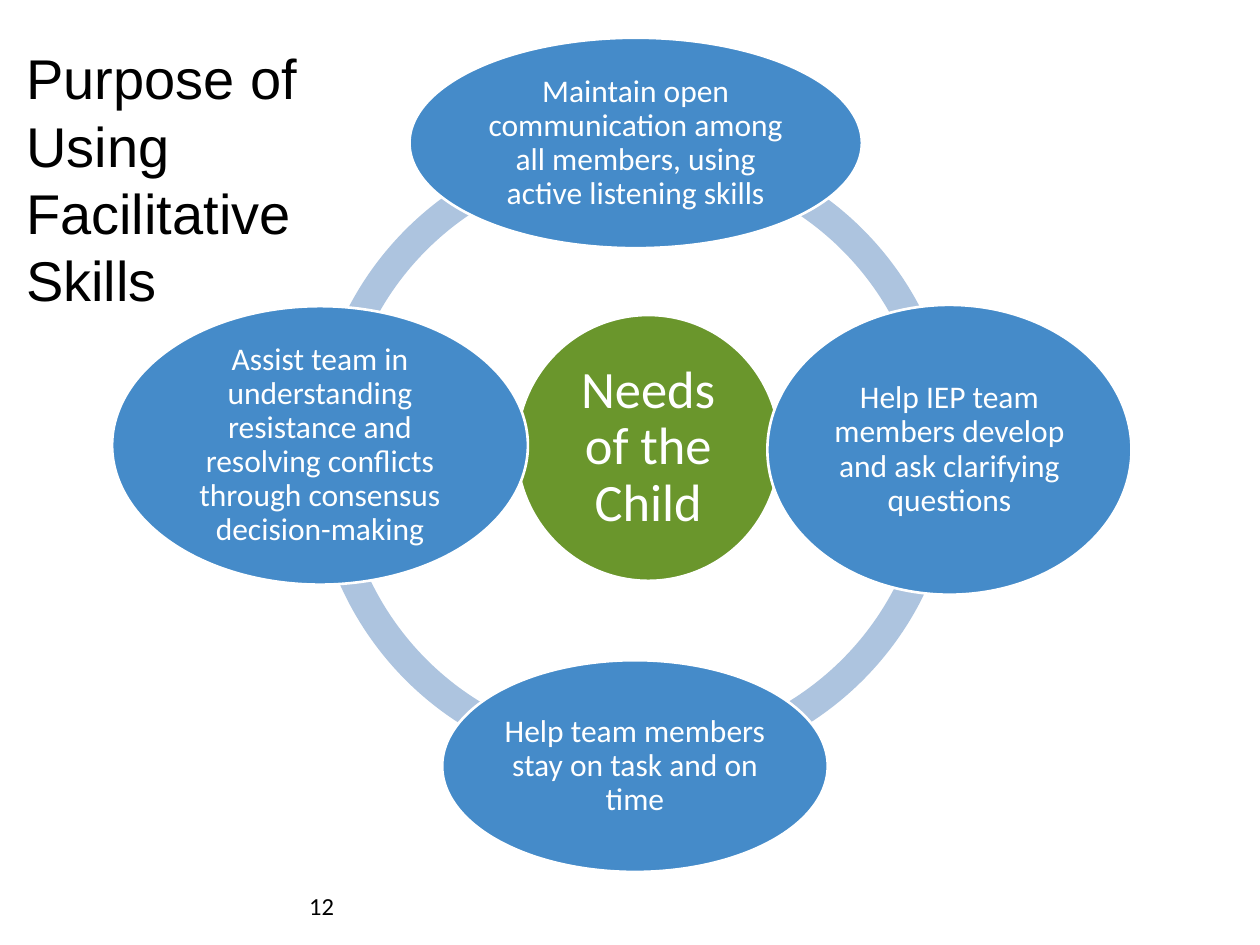
from pptx import Presentation
from pptx.dml.color import RGBColor
from pptx.enum.shapes import MSO_SHAPE
from pptx.enum.text import MSO_ANCHOR, MSO_AUTO_SIZE, PP_ALIGN
from pptx.util import Inches, Pt

BLUE, GREEN, PALE_BLUE = "458BC9", "6A962C", "ADC4DF"
WHITE, BLACK = "FFFFFF", "000000"

RING_SIZE, RING_TOP = 5.06, 1.08
RING_ARCS = [
    (2.48, 109.09, 162.31),
    (2.48, 53.69, 109.09),
    (2.53, 215.4, 54.3),
    (2.53, 161.7, 215.4),
]
PURPOSES = [
    ((3.25, 0.3, 3.59, 1.67),
     "Maintain open communication among all members, using active listening skills"),
    ((6.09, 2.42, 2.89, 2.3),
     "Help IEP team members develop and ask clarifying questions"),
    ((3.51, 5.24, 3.06, 1.68),
     "Help team members stay on task and on time"),
    ((0.89, 2.43, 3.3, 2.21),
     "Assist team in understanding resistance and resolving conflicts "
     "through consensus decision-making"),
]


def color(hex_string):
    """Turn a hex string into a color."""
    return RGBColor.from_string(hex_string)


def to_inches(box):
    """Convert a box of plain numbers to lengths."""
    return [Inches(value) for value in box]


def format_text(text_frame, size, font_name, font_color, alignment):
    """Format every paragraph and run of a text frame."""
    for paragraph in text_frame.paragraphs:
        paragraph.alignment = alignment
        for run in paragraph.runs:
            run.font.size = Pt(size)
            run.font.name = font_name
            run.font.color.rgb = color(font_color)


def add_filled_shape(slide, kind, box, fill):
    """Add a flat preset shape without a shadow."""
    shape = slide.shapes.add_shape(kind, *to_inches(box))
    shape.shadow.inherit = False
    shape.fill.solid()
    shape.fill.fore_color.rgb = color(fill)
    return shape


def add_ring(slide):
    """Draw the ring as four arcs between the purposes."""
    for left, start, end in RING_ARCS:
        box = (left, RING_TOP, RING_SIZE, RING_SIZE)
        arc = add_filled_shape(slide, MSO_SHAPE.BLOCK_ARC, box, PALE_BLUE)
        arc.line.fill.background()
        for index, value in enumerate((start, end, 0.046)):
            arc.adjustments[index] = value


def add_bubble(slide, box, text, fill, size, margin):
    """Add an outlined ellipse with centred text."""
    bubble = add_filled_shape(slide, MSO_SHAPE.OVAL, box, fill)
    bubble.line.color.rgb = color(WHITE)
    bubble.line.width = Pt(1.5)
    frame = bubble.text_frame
    frame.word_wrap = True
    frame.vertical_anchor = MSO_ANCHOR.MIDDLE
    frame.margin_left = frame.margin_right = Inches(margin)
    frame.margin_top = frame.margin_bottom = Inches(margin)
    frame.text = text
    frame.paragraphs[0].line_spacing = 0.9
    format_text(frame, size, "Calibri", WHITE, PP_ALIGN.CENTER)


def add_title(slide, box):
    """Add the title, one paragraph to a line."""
    frame = slide.shapes.add_textbox(*to_inches(box)).text_frame
    frame.word_wrap = False
    frame.auto_size = MSO_AUTO_SIZE.SHAPE_TO_FIT_TEXT
    frame.text = "Purpose of\nUsing\nFacilitative\nSkills"
    format_text(frame, 32, "Arial", BLACK, PP_ALIGN.LEFT)


def add_page_number(slide, box):
    """Add the page number at the foot of the slide."""
    frame = slide.shapes.add_textbox(*to_inches(box)).text_frame
    frame.word_wrap = True
    frame.vertical_anchor = MSO_ANCHOR.MIDDLE
    frame.text = "12"
    format_text(frame, 14, "Calibri", BLACK, PP_ALIGN.RIGHT)


def main():
    """Build the slide and save it."""
    presentation = Presentation()
    presentation.slide_width = Inches(10)
    presentation.slide_height = Inches(7.5)
    slide = presentation.slides.add_slide(presentation.slide_layouts[6])
    add_page_number(slide, (0.42, 6.99, 2.33, 0.4))
    add_ring(slide)
    add_bubble(slide, (4.1, 2.5, 2.09, 2.11), "Needs of the Child", GREEN, 30, 0.04)
    for box, text in PURPOSES:
        add_bubble(slide, box, text, BLUE, 18, 0.02)
    add_title(slide, (0.11, 0.3, 2.49, 2.26))
    presentation.save("out.pptx")


if __name__ == "__main__":
    main()
